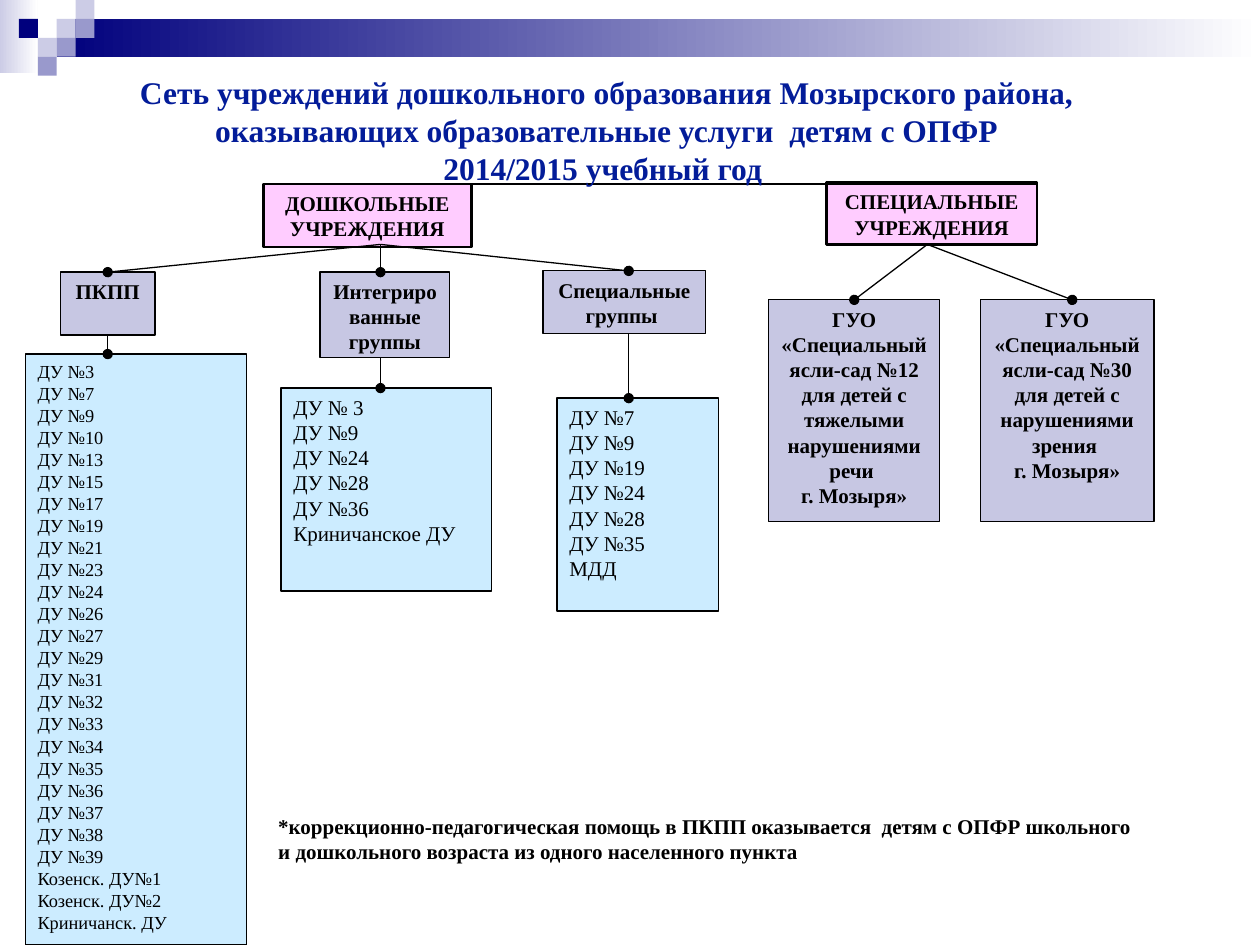
from pptx import Presentation
from pptx.dml.color import RGBColor
from pptx.enum.shapes import MSO_CONNECTOR, MSO_SHAPE
from pptx.enum.text import MSO_ANCHOR, PP_ALIGN
from pptx.oxml.ns import qn
from pptx.util import Inches, Pt
from lxml import etree

RECT, LINE = MSO_SHAPE.RECTANGLE, MSO_CONNECTOR.STRAIGHT
LEFT, MID = PP_ALIGN.LEFT, PP_ALIGN.CENTER
HIGH = MSO_ANCHOR.TOP
TOP, BOTTOM = 0, 2  # connection sites
BLACK = RGBColor(0x00, 0x00, 0x00)
WHITE = RGBColor(0xFF, 0xFF, 0xFF)
NAVY = RGBColor(0x00, 0x00, 0x7D)
BLUE = RGBColor(0x03, 0x1C, 0x99)
PALE = RGBColor(0xCC, 0xCC, 0xE6)
LILAC = RGBColor(0x99, 0x99, 0xCC)
MAUVE = RGBColor(0xC7, 0xC7, 0xE3)
PINK = RGBColor(0xFF, 0xCC, 0xFF)
SKY = RGBColor(0xCC, 0xEC, 0xFF)
FONT = "Times New Roman"
COLS, ROWS = 100, 75  # square grid over the slide
UNIT = Inches(10) / COLS


def grid(*vals):
    return [round(v * UNIT) for v in vals]


def write(frame, lines, size, color=BLACK, bold=True, align=MID):
    frame.word_wrap = True
    frame.text = "\n".join(lines)
    for para in frame.paragraphs:
        para.alignment = align
        for run in para.runs:
            font = run.font
            font.name, font.size, font.bold = FONT, Pt(size), bold
            font.color.rgb = color


def rect(slide, box, fill, fade=None):
    shape = slide.shapes.add_shape(RECT, *grid(*box))
    shape.shadow.inherit = False
    shape.line.fill.background()
    if fade is None:
        shape.fill.solid()
        shape.fill.fore_color.rgb = fill
    else:
        shape.fill.gradient()
        shape.fill.gradient_angle = 0
        for stop, color in zip(shape.fill.gradient_stops, (fill, fade)):
            stop.color.rgb = color
    return shape


def card(slide, box, fill, lines, size=12, bold=True, align=MID, edge=0.75):
    shape = rect(slide, box, fill)
    shape.line.color.rgb = BLACK
    shape.line.width = Pt(edge)
    frame = shape.text_frame
    frame.vertical_anchor = HIGH
    write(frame, lines, size, bold=bold, align=align)
    return shape


def link(slide, start, end, dot=True):
    wire = slide.shapes.add_connector(LINE, *grid(*start, *end))
    wire.line.color.rgb = BLACK
    wire.line.width = Pt(0.75)
    props = wire.line._get_or_add_ln()
    if dot:
        etree.SubElement(props, qn("a:tailEnd"), type="oval")
    etree.SubElement(props.getparent(), qn("a:effectLst"))
    return wire


def header(slide, cell):
    """Fading band with a checker of square cells."""
    rect(slide, (0, 0, 2 * cell, 5.8), PALE, WHITE)
    rect(slide, (3 * cell, cell, COLS - 3 * cell, 2 * cell), NAVY, WHITE)
    for color, spots in (
        (PALE, ((3, 1), (4, 0), (2, 2))),
        (LILAC, ((4, 1), (3, 2), (2, 3))),
        (NAVY, ((1, 1),)),
    ):
        for col, row in spots:
            rect(slide, (col * cell, row * cell, cell, cell), color)


def branch(slide, root, stem, box, lines):
    """Heading box hung from a root point; the stem is its x."""
    head = card(slide, box, MAUVE, lines)
    wire = link(slide, root, (stem, box[1]))
    centred = abs(stem - box[0] - box[2] / 2) < 0.1
    if centred:
        wire.end_connect(head, TOP)
    return head, centred


def preschool(slide, x, y):
    """Preschools: three headings, each with a list below."""
    card(slide, (x + 18.9, y, 16.5, 5), PINK,
         ["ДОШКОЛЬНЫЕ", "УЧРЕЖДЕНИЯ"], edge=1.5)
    root = (x + 28.2, y + 4.8)
    nums = (3, 7, 9, 10, 13, 15, 17, 19, 21, 23, 24, 26, 27, 29, *range(31, 40))
    long = [f"ДУ №{n}" for n in nums]
    long += ["Козенск. ДУ№1", "Козенск. ДУ№2", "Криничанск. ДУ"]
    mixed = ["ДУ № 3"] + [f"ДУ №{n}" for n in (9, 24, 28, 36)]
    mixed += ["Криничанское ДУ"]
    short = [f"ДУ №{n}" for n in (7, 9, 19, 24, 28, 35)] + ["МДД"]
    # stem, heading box, heading, list box, list, list size
    for stem, top, name, low, items, size in (
        (6.55, (2.8, 7, 7.5, 5), "ПКПП", (0, 13.5, 17.6, 46.9), long, 10.5),
        (28.2, (23.4, 7, 10.3, 6.8), "Интегрированные группы",
         (20.3, 16.2, 16.7, 16.1), mixed, 12),
        (47.9, (41.1, 6.9, 12.9, 5), "Специальные группы ",
         (42.2, 17, 12.8, 16.9), short, 12),
    ):
        box = (x + top[0], y + top[1], *top[2:])
        head, centred = branch(slide, root, x + stem, box, [name])
        card(slide, (x + low[0], y + low[1], *low[2:]), SKY, items,
             size, bold=False, align=LEFT)
        wire = link(slide, (x + stem, box[1] + box[3]), (x + stem, y + low[1]))
        if centred:
            wire.begin_connect(head, BOTTOM)


def special(slide, x, y):
    """Special institutions: two nurseries."""
    card(slide, (x + 4.6, y, 16.7, 4.9), PINK,
         ["СПЕЦИАЛЬНЫЕ УЧРЕЖДЕНИЯ"], edge=1.5)
    for stem, left, wide, num, need in (
        (6.8, 0, 13.6, 12, "тяжелыми нарушениями речи "),
        (24.1, 16.8, 13.8, 30, "нарушениями зрения "),
    ):
        lines = [f"ГУО «Специальный\vясли-сад №{num}",
                 f"для детей с {need}", "г. Мозыря»"]
        branch(slide, (x + 12.6, y + 4.9), x + stem,
               (x + left, y + 9.3, wide, 17.6), lines)


def label(slide, box, lines, size, color=BLACK, align=LEFT, inset=0.5):
    frame = slide.shapes.add_textbox(*grid(*box)).text_frame
    frame.margin_top = grid(inset)[0]
    write(frame, lines, size, color, align=align)


def main():
    deck = Presentation()
    deck.slide_width, deck.slide_height = grid(COLS, ROWS)
    slide = deck.slides.add_slide(deck.slide_layouts[6])
    header(slide, 1.5)
    preschool(slide, 2, 14.6)
    special(slide, 61, 14.5)
    # Bar between the two kinds of institution
    link(slide, (21, 14.6), (82.3, 14.6), dot=False)
    label(slide, (1.7, 0, 92.9, 16.2), [
        "Сеть учреждений дошкольного образования Мозырского района,",
        "оказывающих образовательные услуги  детям с ОПФР",
        "2014/2015 учебный год ",
    ], 18, BLUE, MID, inset=5.8)
    label(slide, (21.1, 64.1, 76.8, 5), [
        "*коррекционно-педагогическая помощь в ПКПП оказывается  детям с ОПФР школьного",
        "и дошкольного возраста из одного населенного пункта",
    ], 12)
    deck.save("out.pptx")


if __name__ == "__main__":
    main()
